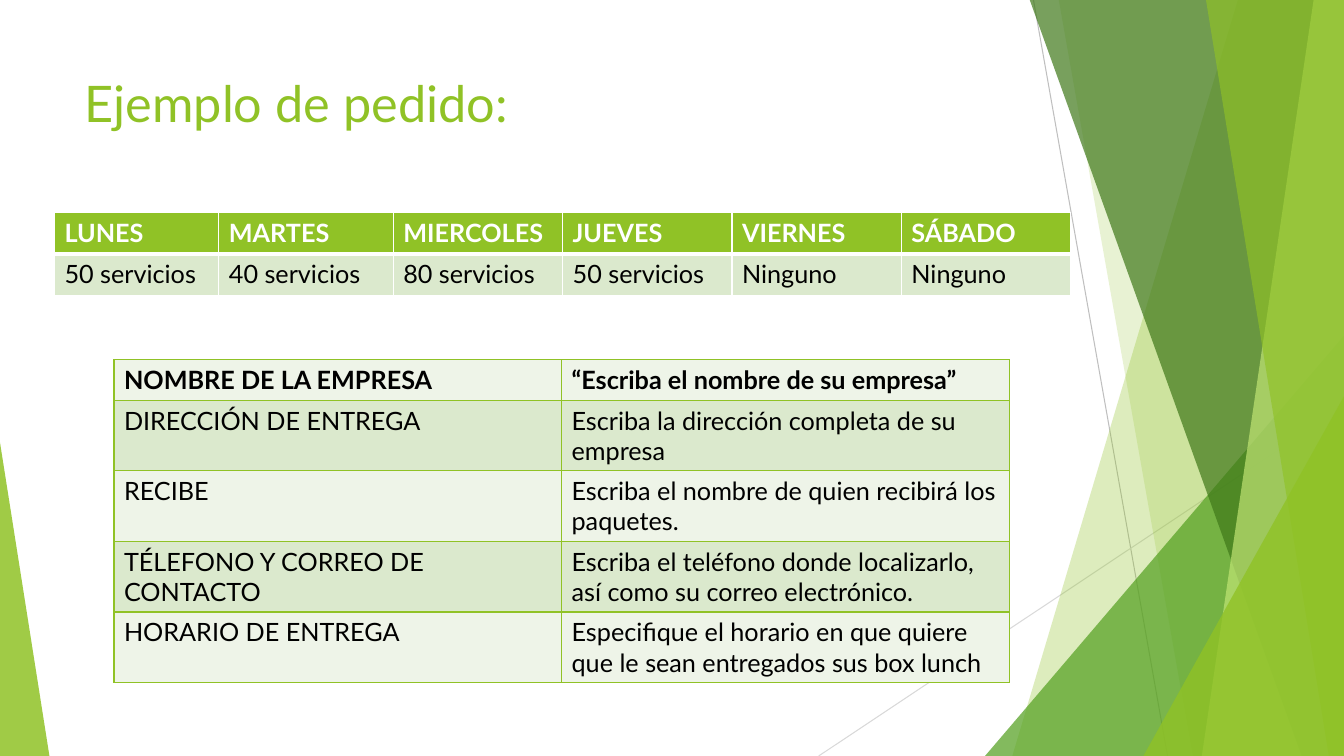
from lxml import etree
from pptx import Presentation
from pptx.dml.color import RGBColor
from pptx.enum.shapes import MSO_CONNECTOR, MSO_SHAPE
from pptx.enum.text import MSO_ANCHOR, PP_ALIGN
from pptx.oxml import parse_xml
from pptx.oxml.ns import nsdecls, qn
from pptx.util import Inches, Pt

LINE = MSO_CONNECTOR.STRAIGHT
TRIANGLE = MSO_SHAPE.ISOSCELES_TRIANGLE
TOP = MSO_ANCHOR.TOP
LEFT = PP_ALIGN.LEFT

COLORS = {
    "lime": "90C226", "green": "54A021", "forest": "3F7819", "pale": "C0E474",
    "mint": "DBE9CD", "mist": "EEF4E8", "white": "FFFFFF", "black": "000000",
    "gray": "BFBFBF", "silver": "D9D9D9",
}
WIDTH, HEIGHT = 13.33, 7.5


def write(frame, text, size=18, color="black", bold=False):
    frame.word_wrap = True
    para = frame.paragraphs[0]
    para.alignment = LEFT
    run = para.add_run()
    run.text = text
    font = run.font
    font.name, font.size, font.bold = "Lato", Pt(size), bold
    font.color.rgb = RGBColor.from_string(COLORS[color])


def border(cell, side, color, points):
    props = cell._tc.get_or_add_tcPr()
    props.append(parse_xml(
        f'<a:ln{side} {nsdecls("a")} w="{Pt(points)}"><a:solidFill>'
        f'<a:srgbClr val="{COLORS[color]}"/></a:solidFill></a:ln{side}>'))


deck = Presentation()
deck.slide_width, deck.slide_height = Inches(WIDTH), Inches(HEIGHT)
slide = deck.slides.add_slide(deck.slide_layouts[5])
shapes = slide.shapes

# Thin lines behind the facets
for start, end, color in [
    ((10.25, 0), (11.58, HEIGHT), "gray"),
    ((WIDTH, 4.03), (8.12, HEIGHT), "silver"),
]:
    line = shapes.add_connector(LINE, *map(Inches, start + end))
    line.line.color.rgb = RGBColor.from_string(COLORS[color])
    line.line.width = Pt(0.75)
    etree.SubElement(line.element.spPr, qn("a:effectLst"))

# Facets: a band is (top x, bottom x), reaching the right edge;
# a triangle is (left, top, width, apex)
for form, color, alpha in [
    ((12.28, 10.04), "lime", 30),
    ((10.5, 11.83), "lime", 20),
    ((9.77, 3.33, 3.56, 1), "green", 72),
    ((10.21, 12.91), "forest", 70),
    ((13.03, 11.92), "pale", 70),
    ((11.96, 13.18), "lime", 65),
    ((11.34, 3.93, 1.99, 1), "lime", 80),
    ((0, 4.39, 0.49, 0), "lime", 85),
]:
    if len(form) == 2:
        upper, lower = map(Inches, form)
        right, base, head = Inches(WIDTH), Inches(HEIGHT), Inches(-0.01)
        pen = shapes.build_freeform(upper, head)
        pen.add_line_segments([(right, head), (right, base), (lower, base)])
        facet = pen.convert_to_shape()
    else:
        left, top, width, apex = form
        facet = shapes.add_shape(
            TRIANGLE, *map(Inches, (left, top, width, HEIGHT - top)))
        facet.adjustments[0] = apex
    facet.shadow.inherit = False
    facet.line.fill.background()
    facet.fill.solid()
    facet.fill.fore_color.rgb = RGBColor.from_string(COLORS[color])
    tint = facet.element.spPr.find(qn("a:solidFill")).find(qn("a:srgbClr"))
    etree.SubElement(tint, qn("a:alpha")).set("val", str(alpha * 1000))

title = shapes.title
title.left, title.top = Inches(0.74), Inches(0.67)
title.width, title.height = Inches(9.4), Inches(1.44)
title.text_frame.vertical_anchor = TOP
write(title.text_frame, "Ejemplo de pedido:", size=36, color="lime")

days = [
    ["LUNES", "MARTES", "MIERCOLES", "JUEVES", "VIERNES", "SÁBADO"],
    ["50 servicios", "40 servicios", "80 servicios", "50 servicios",
     "Ninguno", "Ninguno"],
]
details = [
    ["NOMBRE DE LA EMPRESA", "“Escriba el nombre de su empresa”"],
    ["DIRECCIÓN DE ENTREGA", "Escriba la dirección completa de su empresa"],
    ["RECIBE", "Escriba el nombre de quien recibirá los paquetes."],
    ["TÉLEFONO Y CORREO DE CONTACTO",
     "Escriba el teléfono donde localizarlo, así como su correo electrónico."],
    ["HORARIO DE ENTREGA",
     "Especifique el horario en que quiere que le sean entregados sus box lunch"],
]

# Each table: data, left, top, column widths, row heights, row fills,
# header text, border colour, border under the header
for data, left, top, cols, rows, fills, ink, edge, rule in [
    (days, 0.54, 2.11, [1.63, 1.73] + [1.68] * 4, [0.41] * 2,
     ["lime", "mint"], "white", "white", 3),
    (details, 1.13, 3.57, [4.44] * 2, [0.4] + [0.7] * 4,
     ["mist", "mint"], "black", "lime", 1),
]:
    table = shapes.add_table(
        len(rows), len(cols),
        *map(Inches, (left, top, sum(cols), sum(rows)))).table
    for col, width in zip(table.columns, cols):
        col.width = Inches(width)
    for r, height in enumerate(rows):
        table.rows[r].height = Inches(height)
        for c, text in enumerate(data[r]):
            cell = table.cell(r, c)
            for side in "LRTB":
                thick = (r, side) in [(0, "B"), (1, "T")]
                border(cell, side, edge, rule if thick else 1)
            cell.fill.solid()
            cell.fill.fore_color.rgb = RGBColor.from_string(
                COLORS[fills[r % 2]])
            write(cell.text_frame, text, bold=r == 0,
                  color="black" if r else ink)

deck.save("out.pptx")
